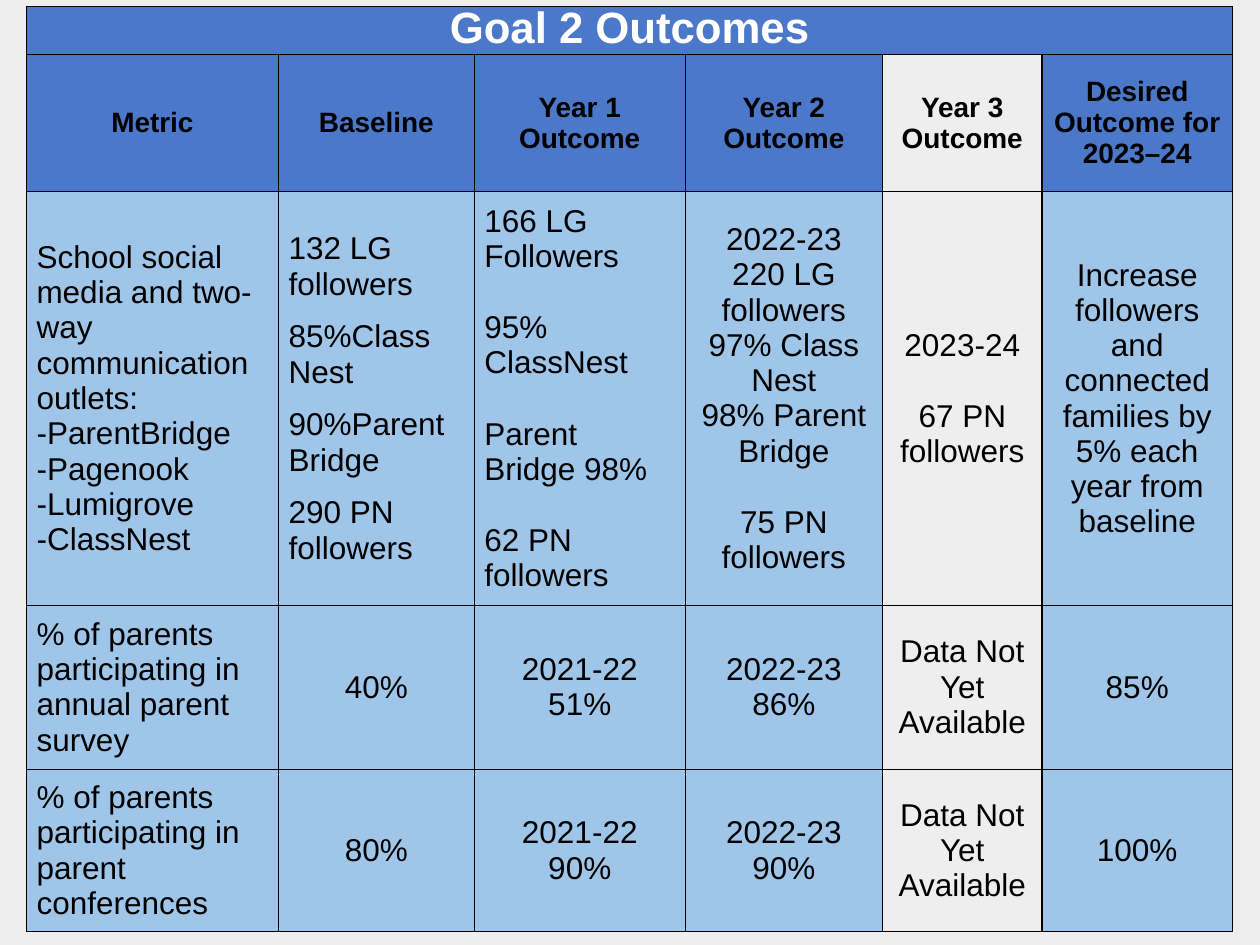
from lxml.etree import SubElement
from pptx import Presentation
from pptx.dml.color import RGBColor
from pptx.enum.text import MSO_ANCHOR, PP_ALIGN
from pptx.oxml.ns import qn
from pptx.util import Pt

BLUE = RGBColor(0x4B, 0x78, 0xC8)
LIGHT_BLUE = RGBColor(0x9F, 0xC5, 0xE8)
GREY = RGBColor(0xEE, 0xEE, 0xEE)
BLACK = RGBColor(0, 0, 0)
WHITE = RGBColor(0xFF, 0xFF, 0xFF)

# Content: each cell is a list of paragraphs; None opens a one-line gap
TITLE = "Goal 2 Outcomes"
HEADERS = ["Metric", "Baseline", "Year 1 Outcome", "Year 2 Outcome",
           "Year 3 Outcome", "Desired Outcome for 2023–24"]
METRICS = [
    [
        ["School social media and two-way communication outlets:",
         "-ParentBridge", "-Pagenook", "-Lumigrove", "-ClassNest"],
        ["132 LG followers", "85%Class Nest", "90%Parent Bridge", "290 PN followers"],
        ["166 LG Followers", None, "95% ClassNest", None,
         "Parent Bridge 98%", None, "62 PN followers"],
        ["2022-23", "220 LG followers", "97% Class Nest", "98% Parent Bridge",
         None, "75 PN followers"],
        ["2023-24", None, "67 PN followers"],
        ["Increase followers and connected families by 5% each year from baseline"],
    ],
    [
        ["% of parents participating in annual parent survey"],
        ["40%"], ["2021-22", "51%"], ["2022-23", "86%"],
        ["Data Not Yet Available"], ["85%"],
    ],
    [
        ["% of parents participating in parent conferences"],
        ["80%"], ["2021-22", "90%"], ["2022-23", "90%"],
        ["Data Not Yet Available"], ["100%"],
    ],
]

# Layout in points
LEFT, TOP = 15.1, 3.8
COLUMN_WIDTHS = [144, 111.9, 120.6, 112.7, 91.2, 108.8]
ROW_HEIGHTS = [27.2, 78.6, 236.4, 93.6, 93]
BASELINE, YEAR_3 = 1, 4
BASELINE_SPACE, LINE_GAP = 10, 20.5


def draw_borders(cell):
    properties = cell._tc.get_or_add_tcPr()
    for index, side in enumerate(("a:lnL", "a:lnR", "a:lnT", "a:lnB")):
        line = properties.makeelement(qn(side), {"w": str(Pt(0.75))})
        fill = SubElement(line, qn("a:solidFill"))
        SubElement(fill, qn("a:srgbClr"), val=str(BLACK))
        properties.insert(index, line)


def style_cell(cell, color):
    cell.fill.solid()
    cell.fill.fore_color.rgb = color
    cell.vertical_anchor = MSO_ANCHOR.MIDDLE
    cell.margin_left = cell.margin_right = Pt(5.8)
    cell.margin_top = cell.margin_bottom = 0
    draw_borders(cell)


def write_cell(cell, lines, size, color=BLACK, bold=False,
               align=PP_ALIGN.CENTER, space=0):
    frame = cell.text_frame
    gap = space
    first = True
    for text in lines:
        if text is None:
            gap = LINE_GAP
            continue
        para = frame.paragraphs[0] if first else frame.add_paragraph()
        first = False
        para.alignment = align
        para.space_before = Pt(gap)
        gap = space
        span = para.add_run()
        span.text = text
        span.font.name = "Arial"
        span.font.size = Pt(size)
        span.font.bold = bold
        span.font.color.rgb = color


deck = Presentation()
deck.slide_width, deck.slide_height = Pt(720), Pt(540)
page = deck.slides.add_slide(deck.slide_layouts[6])
page.background.fill.solid()
page.background.fill.fore_color.rgb = GREY

# Table grid
table = page.shapes.add_table(
    len(ROW_HEIGHTS), len(COLUMN_WIDTHS), Pt(LEFT), Pt(TOP),
    Pt(sum(COLUMN_WIDTHS)), Pt(sum(ROW_HEIGHTS))).table
for column, width in zip(table.columns, COLUMN_WIDTHS):
    column.width = Pt(width)
for row, height in zip(table.rows, ROW_HEIGHTS):
    row.height = Pt(height)

# Cell fills and borders
for r in range(len(ROW_HEIGHTS)):
    for c in range(len(COLUMN_WIDTHS)):
        color = BLUE if r < 2 else LIGHT_BLUE
        if r > 0 and c == YEAR_3:
            color = GREY
        style_cell(table.cell(r, c), color)

# Title row
title = table.cell(0, 0)
title.merge(table.cell(0, len(COLUMN_WIDTHS) - 1))
write_cell(title, [TITLE], 25, WHITE, bold=True)
title.text_frame.paragraphs[0].line_spacing = 0.9

# Header row
for c, header in enumerate(HEADERS):
    write_cell(table.cell(1, c), [header], 16, bold=True)

# Metric rows: the first column and the multi-part lists read from the left
for r, metric in enumerate(METRICS, start=2):
    for c, lines in enumerate(metric):
        from_left = c == 0 or (r == 2 and c <= 2)
        write_cell(table.cell(r, c), lines, 18,
                   align=PP_ALIGN.LEFT if from_left else PP_ALIGN.CENTER,
                   space=BASELINE_SPACE if c == BASELINE else 0)

deck.save("out.pptx")
